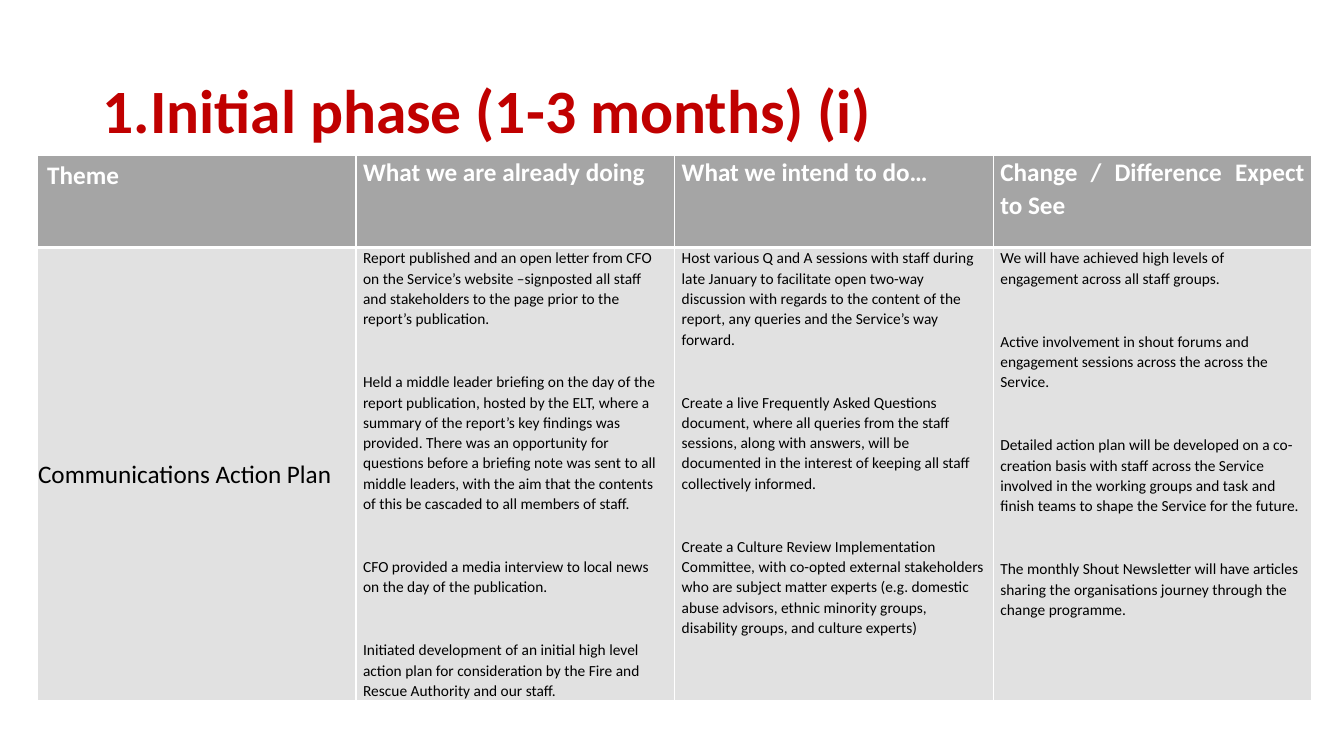
from lxml import etree
from pptx import Presentation
from pptx.dml.color import RGBColor
from pptx.enum.text import MSO_ANCHOR, MSO_AUTO_SIZE, PP_ALIGN
from pptx.oxml.ns import qn
from pptx.util import Cm, Pt

LEFT, JUST = PP_ALIGN.LEFT, PP_ALIGN.JUSTIFY
TOP, MID = MSO_ANCHOR.TOP, MSO_ANCHOR.MIDDLE
NO_FIT = MSO_AUTO_SIZE.NONE
COLORS = {"title": "C00000", "head": "A5A5A5", "body": "E1E1E1",
          "white": "FFFFFF", "text": "000000"}

HEADS = ["Theme", "What we are already doing", "What we intend to do…",
         "Change / Difference Expect to See"]
THEME = "Communications Action Plan"
DOING = [
    "Report published and an open letter from CFO on the Service’s website –signposted all staff and stakeholders to the page prior to the report’s publication.",
    "Held a middle leader briefing on the day of the report publication, hosted by the ELT, where a summary of the report’s key findings was provided. There was an opportunity for questions before a briefing note was sent to all middle leaders, with the aim that the contents of this be cascaded to all members of staff.",
    "CFO provided a media interview to local news on the day of the publication.",
    "Initiated development of an initial high level action plan for consideration by the Fire and Rescue Authority and our staff.",
]
INTEND = [
    "Host various Q and A sessions with staff during late January to facilitate open two-way discussion with regards to the content of the report, any queries and the Service’s way forward.",
    "Create a live Frequently Asked Questions document, where all queries from the staff sessions, along with answers, will be documented in the interest of keeping all staff collectively informed.",
    "Create a Culture Review Implementation Committee, with co-opted external stakeholders who are subject matter experts (e.g. domestic abuse advisors, ethnic minority groups, disability groups, and culture experts)",
]
CHANGE = [
    "We will have achieved high levels of engagement across all staff groups.",
    "Active involvement in shout forums and engagement sessions across the across the Service.",
    "Detailed action plan will be developed on a co-creation basis with staff across the Service involved in the working groups and task and finish teams to shape the Service for the future.",
    "The monthly Shout Newsletter will have articles sharing the organisations journey through the change programme.",
]


def put(obj, **vals):
    for name, val in vals.items():
        setattr(obj, name, val)


def rgb(key):
    return RGBColor.from_string(COLORS[key])


def write(frame, texts, size, color, bold, align=LEFT, line=1.0):
    for i, text in enumerate(texts):
        para = frame.paragraphs[0] if i == 0 else frame.add_paragraph()
        put(para, alignment=align, line_spacing=line)
        if i:
            para.space_before = Pt(30.5)
        run = para.add_run()
        run.text = text
        put(run.font, name="Calibri", size=Pt(size), bold=bold)
        run.font.color.rgb = rgb(color)


def edge(cell, side, width):
    props = cell._tc.get_or_add_tcPr()
    line = etree.SubElement(props, qn(f"a:ln{side}"), w=str(Pt(width)))
    fill = etree.SubElement(line, qn("a:solidFill"))
    etree.SubElement(fill, qn("a:srgbClr"), val=COLORS["white"])


def dress(cell, fill, thick, pads, anchor=TOP):
    for side in "LRTB":
        edge(cell, side, 3 if side == thick else 1)
    cell.fill.solid()
    cell.fill.fore_color.rgb = rgb(fill)
    left, top, right, base = map(Cm, pads)
    put(cell, margin_left=left, margin_top=top, margin_right=right,
        margin_bottom=base, vertical_anchor=anchor)


def add_title(slide, text):
    title = slide.shapes.title
    put(title, left=Cm(2.33), top=Cm(1.01), width=Cm(29.21), height=Cm(3.68))
    put(title.text_frame, auto_size=NO_FIT, vertical_anchor=MID)
    write(title.text_frame, [text], 44, "title", True, line=0.9)


def add_plan(slide):
    wide, heights = 8.03, (2.33, 11.4)
    table = slide.shapes.add_table(2, 4, Cm(0.94), Cm(3.91), Cm(4 * wide),
                                   Cm(sum(heights))).table
    for col in table.columns:
        col.width = Cm(wide)
    for row, high in zip(table.rows, heights):
        row.height = Cm(high)
    slim, broad, thin = (0.18, 0, 0.18, 0), (0.25, 0.13) * 2, (0.02, 0.02, 0.02, 0)

    # Header row
    for i, head in enumerate(HEADS):
        cell = table.cell(0, i)
        dress(cell, "head", "B", slim if i else broad)
        write(cell.text_frame, [head], 18, "white", True,
              JUST if i else LEFT, 1.07 if i else 1.0)

    # Theme and its actions
    cell = table.cell(1, 0)
    dress(cell, "body", "T", thin, MID)
    write(cell.text_frame, [THEME], 18, "text", False)
    for i, texts in enumerate((DOING, INTEND, CHANGE), 1):
        cell = table.cell(1, i)
        dress(cell, "body", "T", slim)
        write(cell.text_frame, texts, 11, "text", False, line=1.07)


def main():
    deck = Presentation()
    put(deck, slide_width=Cm(33.87), slide_height=Cm(19.05))
    slide = deck.slides.add_slide(deck.slide_layouts[5])
    add_title(slide, "1.Initial phase (1-3 months) (i)")
    add_plan(slide)
    deck.save("out.pptx")


if __name__ == "__main__":
    main()
